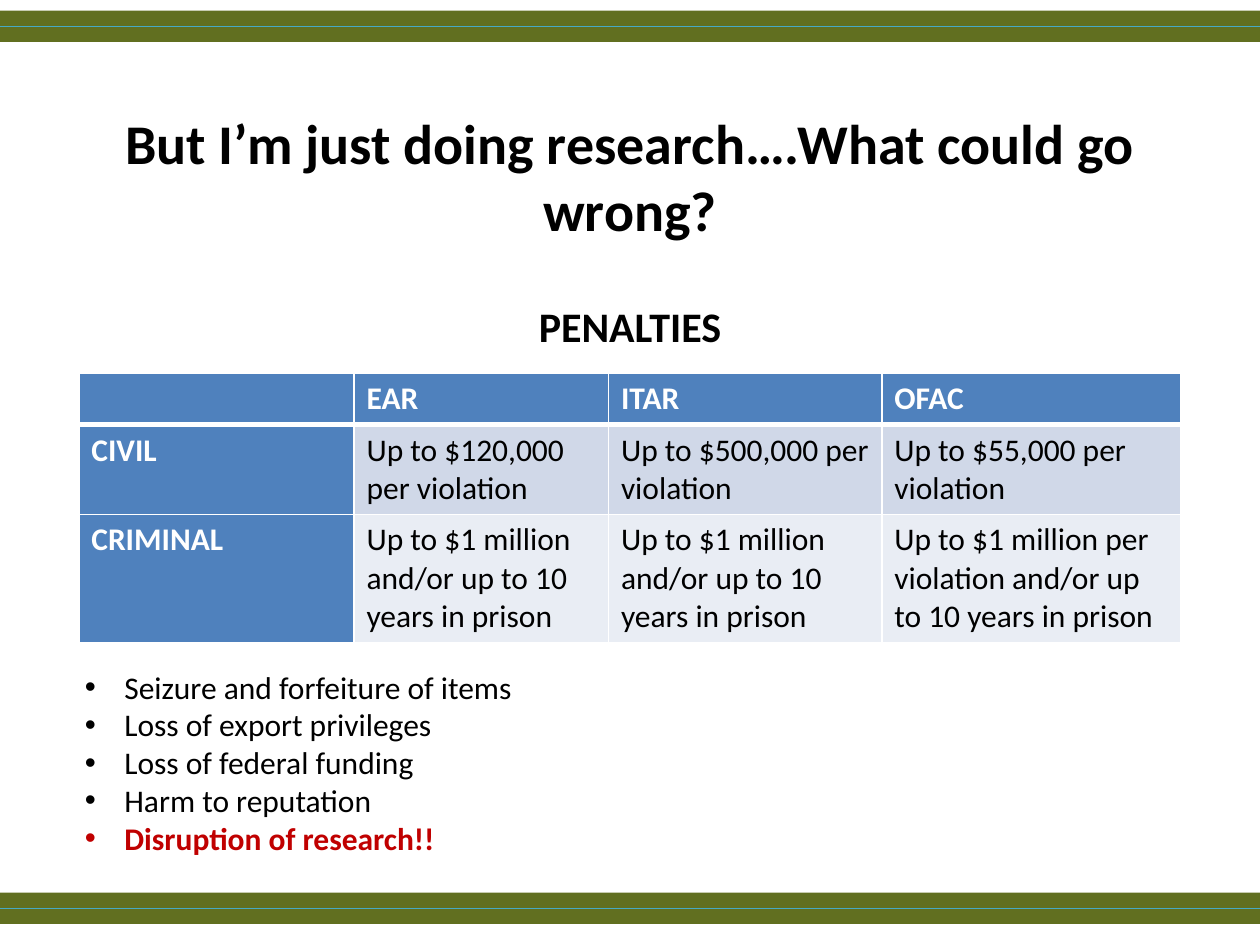
"""Build the slide on export control penalties for research."""
from dataclasses import dataclass

from lxml.etree import SubElement
from pptx import Presentation
from pptx.dml.color import RGBColor
from pptx.enum.shapes import MSO_CONNECTOR, MSO_SHAPE
from pptx.enum.text import MSO_ANCHOR, MSO_AUTO_SIZE, PP_ALIGN
from pptx.oxml.ns import qn
from pptx.util import Pt

BLACK = RGBColor(0x00, 0x00, 0x00)
WHITE = RGBColor(0xFF, 0xFF, 0xFF)
OLIVE = RGBColor(0x61, 0x6F, 0x20)
TEAL = RGBColor(0x46, 0xAA, 0xC5)
BLUE = RGBColor(0x4F, 0x81, 0xBD)
RED = RGBColor(0xC0, 0x00, 0x00)
ROW_FILLS = [BLUE, RGBColor(0xD0, 0xD8, 0xE8), RGBColor(0xE9, 0xED, 0xF4)]

SLIDE_WIDTH, SLIDE_HEIGHT = 720, 540
BAND_HEIGHT = 18
BAND_TOPS = [6, 510]
COLUMN_WIDTHS = [157.3, 145.4, 156.2, 171.1]
ROW_HEIGHTS = [28.8, 50.4, 73]
BULLET_INDENT = 22.5

PRISON_TERM = "Up to $1 million\nand/or up to 10 years in prison"
PENALTIES = [
    ["", "EAR", "ITAR", "OFAC"],
    ["CIVIL", "Up to $120,000 per violation", "Up to $500,000 per violation",
     "Up to $55,000 per violation"],
    ["CRIMINAL", PRISON_TERM, PRISON_TERM,
     "Up to $1 million per violation and/or up to 10 years in prison"],
]


@dataclass(frozen=True)
class Frame:
    left: float
    top: float
    width: float
    height: float

    def lengths(self) -> list:
        return [Pt(value) for value in (self.left, self.top, self.width, self.height)]


@dataclass(frozen=True)
class Style:
    size: float
    color: RGBColor = BLACK
    bold: bool = False


@dataclass(frozen=True)
class Consequence:
    text: str
    style: Style = Style(18)


CONSEQUENCES = [
    Consequence("Seizure and forfeiture of items"),
    Consequence("Loss of export privileges"),
    Consequence("Loss of federal funding"),
    Consequence("Harm to reputation"),
    Consequence("Disruption of research!!", Style(18, RED, True)),
]


def write_span(para, text: str, style: Style) -> None:
    span = para.add_run()
    span.text = text
    values = {"name": "Calibri", "size": Pt(style.size), "bold": style.bold}
    for name, value in values.items():
        setattr(span.font, name, value)
    span.font.color.rgb = style.color


def add_para(text_frame, index: int):
    return text_frame.add_paragraph() if index else text_frame.paragraphs[0]


def add_box(page, frame: Frame):
    text_frame = page.shapes.add_textbox(*frame.lengths()).text_frame
    values = {"word_wrap": True, "auto_size": MSO_AUTO_SIZE.SHAPE_TO_FIT_TEXT}
    for name, value in values.items():
        setattr(text_frame, name, value)
    return text_frame


def write_title(page, text: str) -> None:
    title = page.shapes.title
    names = ("left", "top", "width", "height")
    for name, value in zip(names, Frame(36, 55.5, 648, 90).lengths()):
        setattr(title, name, value)
    title.text_frame.vertical_anchor = MSO_ANCHOR.MIDDLE
    para = title.text_frame.paragraphs[0]
    para.alignment = PP_ALIGN.CENTER
    write_span(para, text, Style(32, bold=True))


def add_band(page, top: float) -> None:
    group = page.shapes.add_group_shape()
    frame = Frame(0, top, SLIDE_WIDTH, BAND_HEIGHT)
    band = group.shapes.add_shape(MSO_SHAPE.RECTANGLE, *frame.lengths())
    band.shadow.inherit = False
    band.fill.solid()
    band.fill.fore_color.rgb = OLIVE
    band.line.fill.background()
    middle = Pt(top + BAND_HEIGHT / 2)
    stripe = group.shapes.add_connector(
        MSO_CONNECTOR.STRAIGHT, Pt(0), middle, Pt(SLIDE_WIDTH), middle)
    stripe.begin_connect(band, 1)
    stripe.end_connect(band, 3)
    stripe.line.color.rgb = TEAL
    stripe.line.width = Pt(0.75)
    SubElement(stripe.element.spPr, qn("a:effectLst"))


def add_borders(cell, widths: dict[str, float]) -> None:
    properties = cell._tc.get_or_add_tcPr()
    for side, width in widths.items():
        border = SubElement(properties, qn(f"a:ln{side}"), w=str(Pt(width)))
        fill = SubElement(border, qn("a:solidFill"))
        SubElement(fill, qn("a:srgbClr"), val=str(WHITE))


def add_penalty_table(page) -> None:
    frame = Frame(45, 213.5, sum(COLUMN_WIDTHS), sum(ROW_HEIGHTS))
    table = page.shapes.add_table(
        len(ROW_HEIGHTS), len(COLUMN_WIDTHS), *frame.lengths()).table
    for column, width in zip(table.columns, COLUMN_WIDTHS):
        column.width = Pt(width)
    for row, height in zip(table.rows, ROW_HEIGHTS):
        row.height = Pt(height)
    for row_index, texts in enumerate(PENALTIES):
        for column_index, text in enumerate(texts):
            cell = table.cell(row_index, column_index)
            heading = row_index == 0 or column_index == 0
            add_borders(cell, {"L": 1, "R": 1, "T": 3 if row_index == 1 else 1,
                               "B": 3 if row_index == 0 else 1})
            cell.fill.solid()
            cell.fill.fore_color.rgb = BLUE if heading else ROW_FILLS[row_index]
            style = Style(18, WHITE, True) if heading else Style(18)
            for index, line in enumerate(text.splitlines()):
                write_span(add_para(cell.text_frame, index), line, style)


def add_consequences(page) -> None:
    text_frame = add_box(page, Frame(41.5, 378, 648, 117))
    for index, consequence in enumerate(CONSEQUENCES):
        para = add_para(text_frame, index)
        properties = para._p.get_or_add_pPr()
        properties.set("marL", str(Pt(BULLET_INDENT)))
        properties.set("indent", str(-Pt(BULLET_INDENT)))
        SubElement(properties, qn("a:buFont"), typeface="Arial")
        SubElement(properties, qn("a:buChar"), char="•")
        write_span(para, consequence.text, consequence.style)


def main() -> None:
    deck = Presentation()
    deck.slide_width, deck.slide_height = Pt(SLIDE_WIDTH), Pt(SLIDE_HEIGHT)
    page = deck.slides.add_slide(deck.slide_layouts[5])
    write_title(page, "But I’m just doing research….What could go wrong?")
    for top in BAND_TOPS:
        add_band(page, top)
    add_penalty_table(page)
    para = add_box(page, Frame(45, 168, 630, 36)).paragraphs[0]
    para.alignment = PP_ALIGN.CENTER
    write_span(para, "PENALTIES", Style(24, bold=True))
    add_consequences(page)
    deck.save("out.pptx")


if __name__ == "__main__":
    main()
